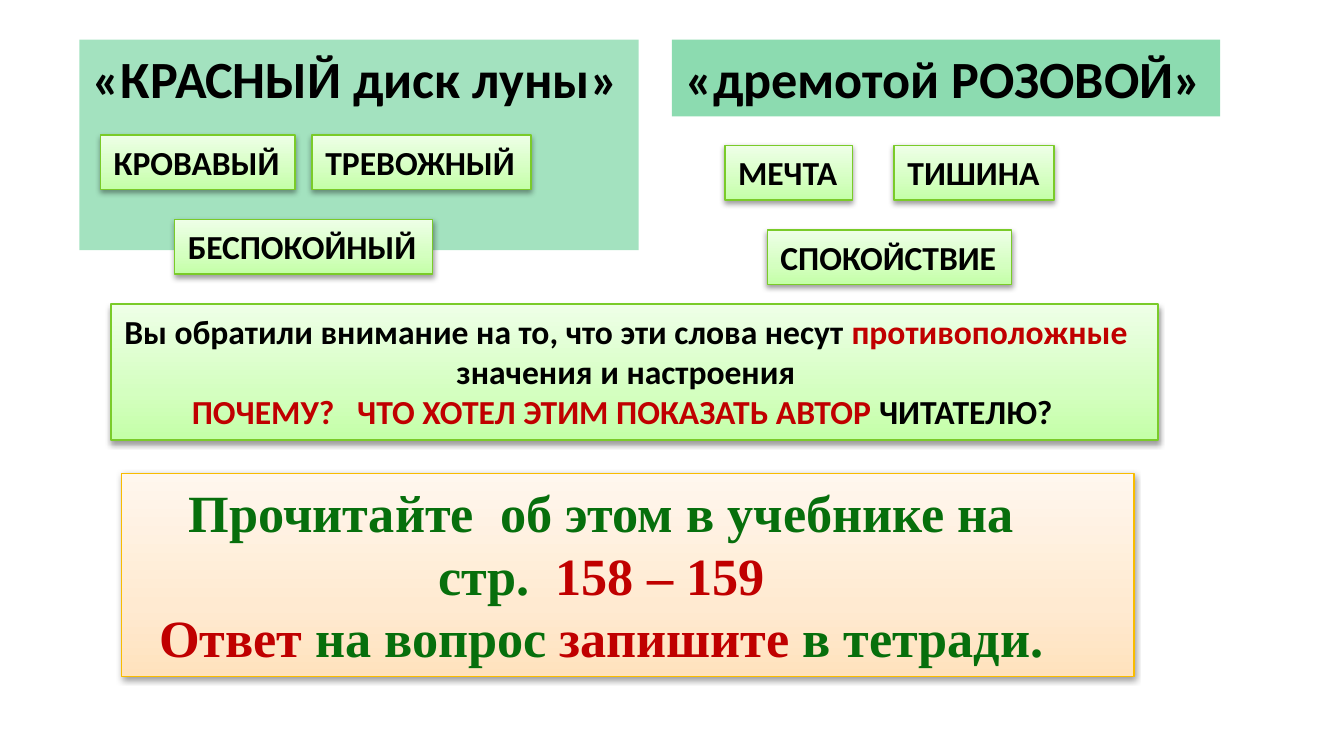
from copy import deepcopy
from dataclasses import dataclass

from lxml import etree
from pptx import Presentation
from pptx import util as u
from pptx.dml.color import RGBColor
from pptx.enum import text
from pptx.oxml import parse_xml
from pptx.oxml.ns import nsdecls, qn


@dataclass(frozen=True)
class Theme:
    sans: str = "Calibri"
    serif: str = "Times New Roman"
    large: int = 28
    small: int = 18
    black: str = "000000"
    red: str = "C00000"
    green: str = "076F0C"
    band: str = "00B050"
    lime: tuple = ("C4FFA7", "D4FFC0", "EEFFE7")
    lime_edge: str = "7ACB29"
    peach: tuple = ("FFE2BD", "FFEAD1", "FFF7EE")
    peach_edge: str = "F9BC00"


theme = Theme()


def write(box, lines, size, font=theme.sans, wrap=False, aligns=("LEFT",)):
    """Fill a box with lines, each a list of (words, colour) runs."""
    frame = box.text_frame
    frame.word_wrap = wrap
    frame.auto_size = text.MSO_AUTO_SIZE.SHAPE_TO_FIT_TEXT
    frame.vertical_anchor = text.MSO_ANCHOR.TOP
    for i, (line, align) in enumerate(zip(lines, aligns)):
        paragraph = frame.add_paragraph() if i else frame.paragraphs[0]
        paragraph.alignment = text.PP_ALIGN[align]
        for words, colour in line:
            run = paragraph.add_run()
            run.text = words
            run.font.name = font
            run.font.size = u.Pt(size)
            run.font.bold = True
            run.font.color.rgb = RGBColor.from_string(colour)


def add_card(left, top, width, height, colours, edge):
    """Add a text box with an upward gradient, a thin edge and a soft shadow."""
    card = slide.shapes.add_textbox(u.Cm(left), u.Cm(top), u.Cm(width), u.Cm(height))
    card.fill.gradient()
    card.fill.gradient_angle = 90
    properties = card.element.spPr
    stop_list = properties.find(".//" + qn("a:gsLst"))
    stop_list.append(deepcopy(stop_list[0]))
    for stop, position, colour in zip(card.fill.gradient_stops, (0, 0.35, 1), colours):
        stop.position = position
        stop.color.rgb = RGBColor.from_string(colour)
    card.line.color.rgb = RGBColor.from_string(edge)
    card.line.width = u.Pt(0.75)
    properties.append(parse_xml(
        f'<a:effectLst {nsdecls("a")}>'
        f'<a:outerShdw blurRad="{u.Pt(3.1)}" dist="{u.Pt(1.6)}" dir="5400000" rotWithShape="0">'
        f'<a:srgbClr val="{theme.black}"><a:alpha val="38000"/></a:srgbClr>'
        '</a:outerShdw></a:effectLst>'))
    return card


deck = Presentation()
deck.slide_width, deck.slide_height = u.Cm(25.4), u.Cm(14.29)
slide = deck.slides.add_slide(deck.slide_layouts[5])

# Two contrasted quotations
red_moon = slide.shapes.title
pink_slumber = slide.shapes.add_textbox(0, 0, 0, 0)
for heading, words, left, width, opacity in (
    (red_moon, "«КРАСНЫЙ диск луны»", 1.5, 10.57, 36),
    (pink_slumber, "«дремотой РОЗОВОЙ»", 12.7, 10.36, 45),
):
    heading.left, heading.top = u.Cm(left), u.Cm(0.75)
    heading.width, heading.height = u.Cm(width), u.Cm(1.45)
    heading.fill.solid()
    heading.fill.fore_color.rgb = RGBColor.from_string(theme.band)
    band_colour = heading.element.spPr.find(".//" + qn("a:srgbClr"))
    etree.SubElement(band_colour, qn("a:alpha"), val=str(opacity * 1000))
    write(heading, [[(words, theme.black)]], theme.large)

# Associations under each quotation
for word, left, top, width in (
    ("КРОВАВЫЙ", 1.9, 2.55, 3.68),
    ("ТРЕВОЖНЫЙ", 5.9, 2.55, 4.14),
    ("БЕСПОКОЙНЫЙ", 3.3, 4.15, 4.88),
    ("МЕЧТА", 13.7, 2.75, 2.41),
    ("ТИШИНА", 16.9, 2.75, 3.02),
    ("СПОКОЙСТВИЕ", 14.5, 4.35, 4.62),
):
    association = add_card(left, top, width, 1.03, theme.lime, theme.lime_edge)
    write(association, [[(word, theme.black)]], theme.small)

question = add_card(2.1, 5.75, 19.79, 2.57, theme.lime, theme.lime_edge)
write(question, [
    [("Вы обратили внимание на то, что эти слова несут ", theme.black),
     ("противоположные", theme.red)],
    [("значения и настроения", theme.black)],
    [("ПОЧЕМУ?   ЧТО ХОТЕЛ ЭТИМ ПОКАЗАТЬ АВТОР ", theme.red),
     ("ЧИТАТЕЛЮ? ", theme.black)],
], theme.small, aligns=("LEFT", "CENTER", "CENTER"))

task = add_card(2.3, 8.95, 19.13, 3.84, theme.peach, theme.peach_edge)
write(task, [
    [("Прочитайте  об этом в учебнике на", theme.green)],
    [("стр.  ", theme.green), ("158 – 159", theme.red)],
    [("Ответ", theme.red), (" на вопрос ", theme.green),
     ("запишите", theme.red), (" в тетради.", theme.green)],
], theme.large, font=theme.serif, wrap=True, aligns=("CENTER",) * 3)
# The first line is centred a little left of the others
first_line = task.text_frame.paragraphs[0]
first_line._p.get_or_add_pPr().set("marR", str(u.Cm(1)))

deck.save("out.pptx")
